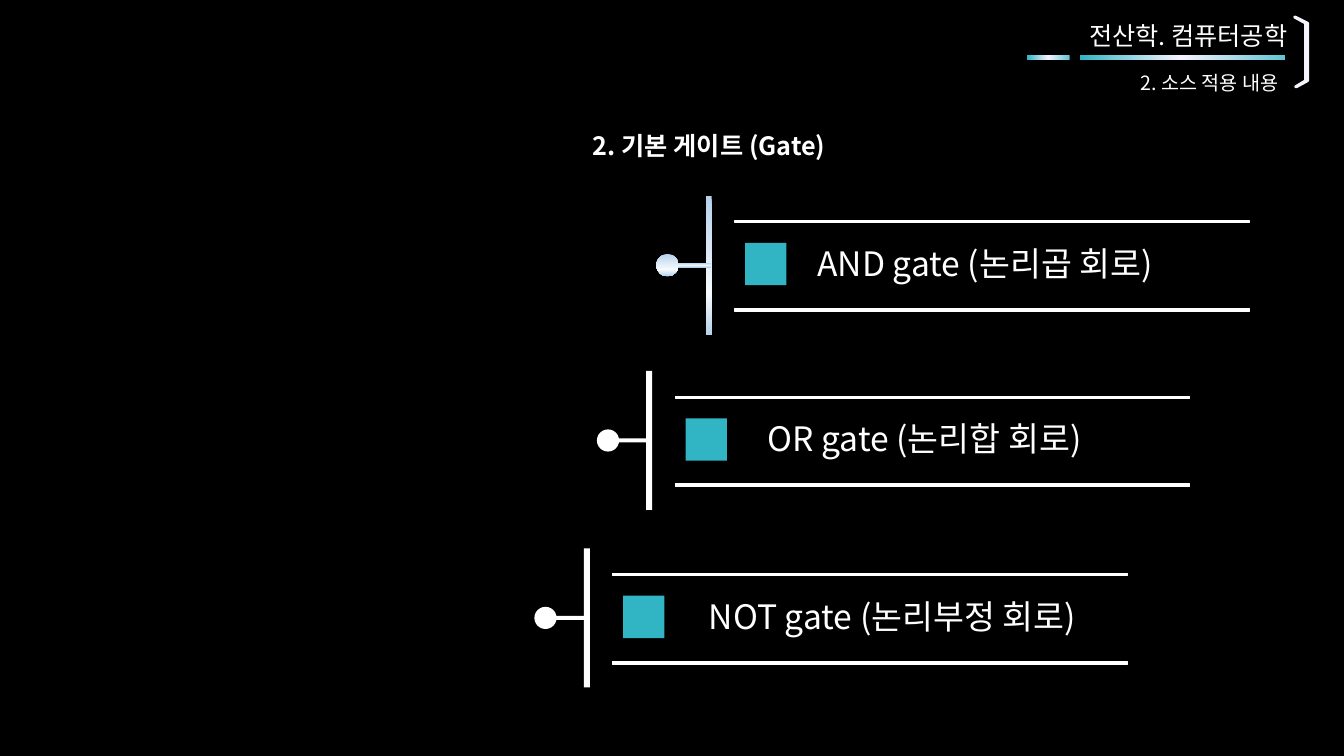
import pptx
import pptx.dml.color
import pptx.enum.shapes
import pptx.enum.text
import pptx.oxml
import pptx.oxml.ns
import pptx.util
from lxml import etree

Inches = pptx.util.Inches
RECTANGLE = pptx.enum.shapes.MSO_SHAPE.RECTANGLE
OVAL = pptx.enum.shapes.MSO_SHAPE.OVAL
CENTER = pptx.enum.text.PP_ALIGN.CENTER
LEFT = pptx.enum.text.PP_ALIGN.LEFT

FONT = "Noto Sans CJK KR"
COLORS = {
    "black": "000000",
    "white": "FFFFFF",
    "teal": "31B5C4",
    "light teal": "61C4D2",
    "lavender": "F7F3FF",
    "sky": "B5D2EC",
    "pale sky": "F7FAFD",
}
HEADER_GRADIENT = ([(0, "light teal"), (51, "lavender"), (100, "teal")], 180)
BRANCH_GRADIENT = ([(0, "sky"), (70, "pale sky"), (100, "sky")], 270)


def rgb(color):
    return pptx.dml.color.RGBColor.from_string(COLORS[color])


class GateSlide:
    def __init__(self, presentation):
        self.slide = presentation.slides.add_slide(presentation.slide_layouts[5])
        self.slide.background.fill.solid()
        self.slide.background.fill.fore_color.rgb = rgb("black")

    def paint(self, shape, fill):
        """Fill with a colour name or a (stops, angle) gradient."""
        if isinstance(fill, str):
            shape.fill.solid()
            shape.fill.fore_color.rgb = rgb(fill)
            return
        stops, angle = fill
        shape.fill.gradient()
        shape.fill.gradient_angle = angle
        qn = pptx.oxml.ns.qn
        stop_list = shape._element.spPr.find(qn("a:gradFill")).find(qn("a:gsLst"))
        for old_stop in list(stop_list):
            stop_list.remove(old_stop)
        for percent, color in stops:
            stop = etree.SubElement(stop_list, qn("a:gs"), pos=str(percent * 1000))
            etree.SubElement(stop, qn("a:srgbClr"), val=COLORS[color])

    def shape(self, kind, left, top, width, height, fill, line=None):
        shape = self.slide.shapes.add_shape(
            kind, Inches(left), Inches(top), Inches(width), Inches(height))
        shape.shadow.inherit = False
        self.paint(shape, fill)
        if line:
            shape.line.color.rgb = rgb(line)
            shape.line.width = pptx.util.Pt(0.75)
        else:
            shape.line.fill.background()

    def outline(self, points, color, width):
        corners = [(Inches(x), Inches(y)) for x, y in points]
        builder = self.slide.shapes.build_freeform(*corners[0])
        builder.add_line_segments(corners[1:], close=True)
        shape = builder.convert_to_shape()
        shape.shadow.inherit = False
        shape.fill.background()
        shape.line.color.rgb = rgb(color)
        shape.line.width = pptx.util.Pt(width)

    def set_text(self, shape, text, size, alignment, bold=False, spacing=None):
        frame = shape.text_frame
        frame.word_wrap = True
        frame.auto_size = pptx.enum.text.MSO_AUTO_SIZE.SHAPE_TO_FIT_TEXT
        frame.vertical_anchor = pptx.enum.text.MSO_ANCHOR.TOP
        paragraph = frame.paragraphs[0]
        paragraph.alignment = alignment
        paragraph.space_before = pptx.util.Pt(0)
        if spacing:
            paragraph.line_spacing = spacing
        run = paragraph.add_run()
        run.text = text
        run.font.size = pptx.util.Pt(size)
        run.font.bold = bold
        run.font.name = FONT
        run.font.color.rgb = rgb("white")
        etree.SubElement(run.font._element, pptx.oxml.ns.qn("a:ea"), typeface=FONT)

    def label(self, left, top, width, height, text, size):
        box = self.slide.shapes.add_textbox(
            Inches(left), Inches(top), Inches(width), Inches(height))
        self.set_text(box, text, size, CENTER)

    def title(self, left, top, width, height, text):
        title = self.slide.shapes.title
        title.left, title.top = Inches(left), Inches(top)
        title.width, title.height = Inches(width), Inches(height)
        self.set_text(title, text, 18, LEFT, bold=True, spacing=1.5)

    def gate(self, left, top, text_left, text, fill):
        """Draw a branch whose stem starts at left, top, and its ruled panel."""
        self.shape(RECTANGLE, left, top, 0.06, 1.38, fill)
        self.shape(RECTANGLE, left - 0.39, top + 0.67, 0.44, 0.04, fill)
        self.shape(OVAL, left - 0.49, top + 0.58, 0.22, 0.22, fill)
        for offset, height in ((0.25, 0.02), (1.12, 0.03)):
            self.shape(RECTANGLE, left + 0.29, top + offset, 5.1, height,
                       "white", line="white")
        self.shape(RECTANGLE, left + 0.39, top + 0.47, 0.41, 0.42, "teal")
        self.label(text_left, top + 0.42, 4.18, 0.5, text, 24)


def main():
    presentation = pptx.Presentation()
    presentation.slide_width = Inches(13.33)
    presentation.slide_height = Inches(7.5)
    page = GateSlide(presentation)

    page.title(5.78, 1.09, 2.54, 0.56, "2. 기본 게이트 (Gate)")

    page.label(10.6, 0.15, 2.37, 0.4, "전산학. 컴퓨터공학", 18)
    for left, width in ((10.19, 0.42), (10.71, 2.04)):
        page.shape(RECTANGLE, left, 0.55, width, 0.05, HEADER_GRADIENT)
    page.outline([(12.86, 0.86), (12.85, 0.86), (12.95, 0.8), (12.95, 0.23),
                  (12.84, 0.17), (12.85, 0.17), (12.97, 0.23), (12.97, 0.8)],
                 "lavender", 2)
    page.label(11.03, 0.65, 1.93, 0.34, "2. 소스 적용 내용", 14)

    gates = [
        (7, 1.94, 7.68, "AND gate (논리곱 회로)", BRANCH_GRADIENT),
        (6.41, 3.68, 7.08, "OR gate (논리합 회로)", "white"),
        (5.79, 5.44, 6.76, "NOT gate (논리부정 회로)", "white"),
    ]
    for gate in gates:
        page.gate(*gate)

    presentation.save("out.pptx")


if __name__ == "__main__":
    main()
